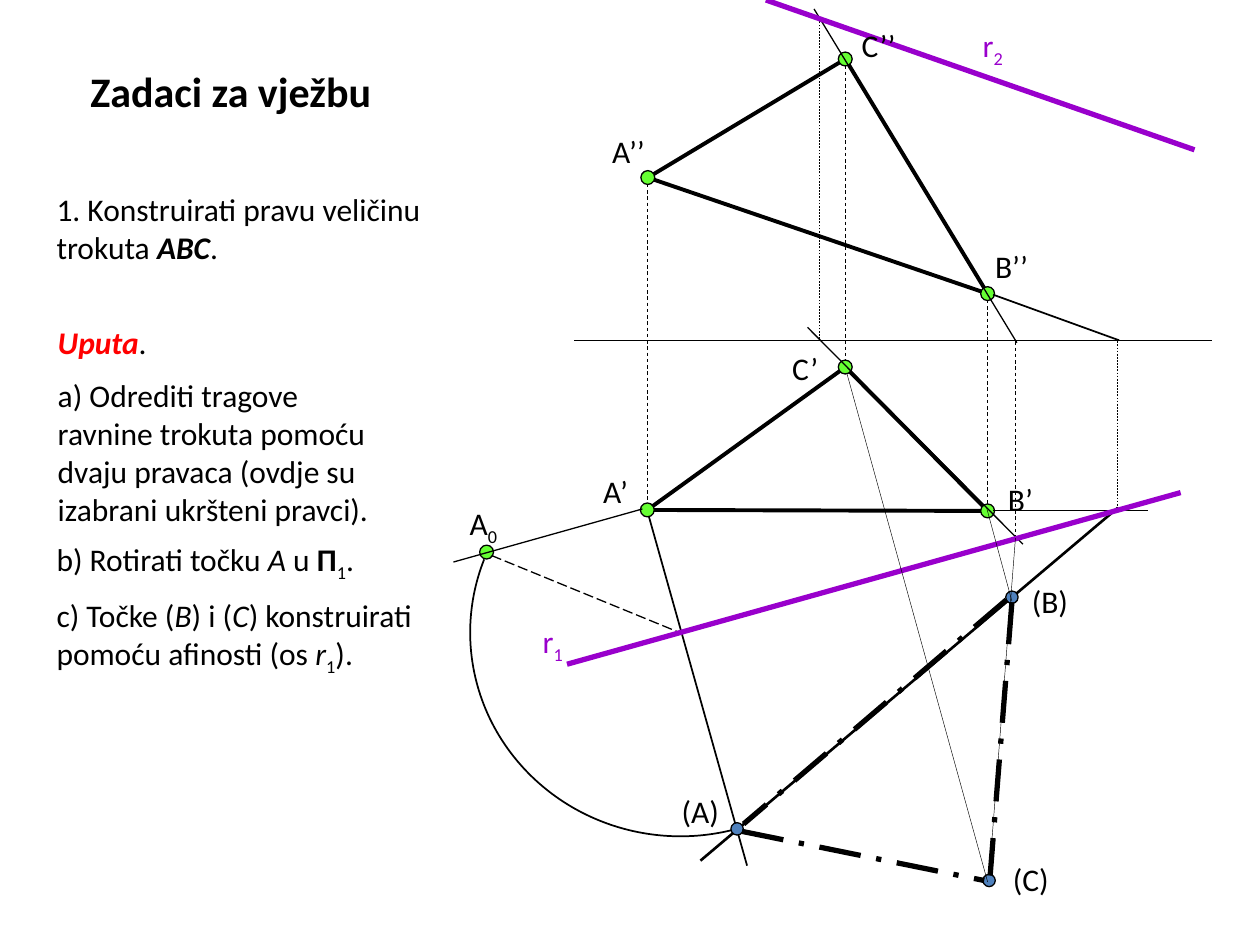
from lxml import etree
from pptx import Presentation
from pptx import util as u
from pptx.dml import color
from pptx.enum import dml, shapes, text
from pptx.oxml import ns

BLACK, PURPLE, RED = "000000", "9900CC", "FF0000"
GREEN, BLUE = "66FF33", "4F81BD"
DASH, LONG, DASH_DOT = (dml.MSO_LINE.DASH, dml.MSO_LINE.LONG_DASH,
                        dml.MSO_LINE.LONG_DASH_DOT)
BOLD, ITALIC, SUB = {"bold": True}, {"italic": True}, {"sub": True}
STRONG = {"bold": True, "italic": True}

# Points in cm: 2 = front view, 1 = top view, R = rotated into the plane
A2, B2, C2 = (13.06, 3.58), (19.91, 5.92), (17.04, 1.19)
A1, B1, C1 = (13.05, 10.28), (19.91, 10.3), (17.04, 7.4)
A0, AR, BR, CR = (9.81, 11.13), (14.86, 16.71), (20.4, 12.04), (19.94, 17.75)

LABELS = [
    (11.91, 9.4, 1.17, "A’"), (20.07, 9.55, 1.24, "B’"),
    (15.72, 6.91, 1.09, "C’"), (19.81, 4.85, 1.35, "B’’"),
    (12.09, 2.54, 1.45, "A’’"), (17.12, 0.41, 1.52, "C’’"),
    (13.49, 15.85, 1.45, "(A)"), (20.55, 11.61, 1.63, "(B)"),
    (20.17, 17.22, 1.35, "(C)"),
]
INDEXED_LABELS = [
    (9.22, 10.03, "A", "0", BLACK),
    (10.69, 12.42, "r", "1", PURPLE),
    (19.56, 0.41, "r", "2", PURPLE),
]
# Width in pt, dash, then lines as x1, y1, x2, y2
CONSTRUCTION = [
    (0.75, None, [(16.41, 0.18, 20.5, 6.91), (16.28, 6.6, 20.62, 10.97),
                  (9.14, 11.33, 12.95, 10.26)]),
    (0.25, DASH, [(16.51, 6.83, 16.51, 0.36), (22.53, 6.88, 22.53, 10.29)]),
    (0.5, DASH, [(20.47, 6.88, 20.47, 10.87)]),
    (1, None, [(20.02, 5.94, 22.56, 6.86), (20.02, 10.29, 23.14, 10.29),
               (15.06, 17.45, 13.08, 10.41)]),
    (0.75, LONG, [(9.91, 11.2, 13.77, 12.78)]),
    (1.5, None, [(22.53, 10.24, 14.12, 17.35)]),
]
ROTATION_RAYS = [(20.4, 12.12, 19.89, 10.24), (20.47, 10.85, 19.94, 17.65),
                 (19.91, 17.78, 17.07, 7.52)]
TRUE_SIZE_SIDES = [(14.96, 16.76, 19.84, 17.75), (20.29, 12.09, 14.99, 16.61),
                   (20.4, 12.14, 19.96, 17.65)]


def rgb(value):
    return color.RGBColor.from_string(value)


class Drawing:
    """Holds the text style and the slide being drawn; lengths are in cm."""
    font, size = "Calibri", 18

    def __init__(self, slide):
        self.s = slide

    def place(self, sp, x, y, w, h):
        values = {"left": x, "top": y, "width": w, "height": h}
        for name, value in values.items():
            setattr(sp, name, u.Cm(value))

    def fill_text(self, sp, paragraphs, size=None):
        """Fill sp with paragraphs, each a list of (text, format) runs."""
        tf = sp.text_frame
        frame = {"word_wrap": True, "auto_size": text.MSO_AUTO_SIZE.NONE,
                 "vertical_anchor": text.MSO_ANCHOR.TOP}
        for name, value in frame.items():
            setattr(tf, name, value)
        for i, runs in enumerate(paragraphs):
            p = tf.add_paragraph() if i else tf.paragraphs[0]
            p.alignment = text.PP_ALIGN.LEFT
            p.space_before = u.Pt(9 if i else 0)
            for content, style in runs:
                self.add_run(p, content, size, **style)

    def add_run(self, p, content, size, fill=BLACK, sub=False, bold=False,
                italic=False):
        r = p.add_run()
        r.text = content
        values = {"name": self.font, "size": u.Pt(size or self.size),
                  "bold": bold, "italic": italic}
        for name, value in values.items():
            setattr(r.font, name, value)
        r.font.color.rgb = rgb(fill)
        if sub:
            r._r.get_or_add_rPr().set("baseline", "-25000")

    def title(self, box, content):
        sp = self.s.shapes.title
        self.place(sp, *box)
        self.fill_text(sp, [[(content, BOLD)]], size=24)

    def body(self, box, paragraphs):
        sp = self.s.placeholders[1]
        self.place(sp, *box)
        self.fill_text(sp, paragraphs)
        for p in sp.text_frame.paragraphs:
            pPr = p._p.get_or_add_pPr()
            pPr.set("marL", "0")
            pPr.set("indent", "0")
            etree.SubElement(pPr, ns.qn("a:buNone"))

    def text(self, box, *runs):
        sp = self.s.shapes.add_textbox(*map(u.Cm, box))
        self.fill_text(sp, [runs])

    def line(self, x1, y1, x2, y2, width=0.75, dash=None, stroke=BLACK):
        sp = self.s.shapes.add_connector(
            shapes.MSO_CONNECTOR.STRAIGHT, *map(u.Cm, (x1, y1, x2, y2)))
        self.outline(sp, width, stroke)
        if dash:
            sp.line.dash_style = dash
        etree.SubElement(sp._element.spPr, ns.qn("a:effectLst"))

    def outline(self, sp, width, stroke=BLACK):
        sp.line.color.rgb = rgb(stroke)
        sp.line.width = u.Pt(width)

    def triangle(self, a, b, c):
        for start, end in ((c, a), (a, b), (c, b)):
            self.line(*start, *end, width=2.25)

    def dot(self, x, y, fill, d=0.28):
        sp = self.s.shapes.add_shape(
            shapes.MSO_SHAPE.OVAL, *map(u.Cm, (x - d / 2, y - d / 2, d, d)))
        sp.shadow.inherit = False
        sp.fill.solid()
        sp.fill.fore_color.rgb = rgb(fill)
        self.outline(sp, 0.75)

    def arc(self, x, y, rx, ry, start, end):
        """Arc about x, y; angles in degrees, clockwise from the right."""
        sp = self.s.shapes.add_shape(
            shapes.MSO_SHAPE.ARC,
            *map(u.Cm, (x - rx, y - ry, 2 * rx, 2 * ry)))
        sp.shadow.inherit = False
        sp.fill.background()
        self.outline(sp, 1)
        for i, angle in enumerate((start, end)):
            sp.adjustments[i] = angle * 0.6  # 60000 units per degree


def main():
    prs = Presentation()
    prs.slide_width, prs.slide_height = u.Cm(25.4), u.Cm(19.05)
    d = Drawing(prs.slides.add_slide(prs.slide_layouts[1]))

    d.title((1.57, 1.19, 7.7, 1.52), "Zadaci za vježbu")
    d.text((0.89, 3.71, 9.42, 1.78),
           ("1. Konstruirati pravu veličinu trokuta ", {}),
           ("ABC", STRONG), (".", {}))
    d.body((0.91, 6.38, 7.37, 4.5), [
        [("Uputa", {**STRONG, "fill": RED}), (".", {})],
        [("a) Odrediti tragove ravnine trokuta pomoću dvaju pravaca "
          "(ovdje su izabrani ukršteni pravci).", {})]])
    d.text((0.89, 10.77, 7.34, 0.94),
           ("b) Rotirati točku ", {}), ("A", ITALIC), (" u ", {}),
           ("Π", BOLD), ("1", SUB), (".", {}))
    d.text((0.89, 11.89, 7.77, 1.8),
           ("c) Točke (", {}), ("B", ITALIC), (") i (", {}), ("C", ITALIC),
           (") konstruirati pomoću afinosti (os ", {}), ("r", ITALIC),
           ("1", SUB), (").", {}))

    d.line(11.58, 6.86, 24.43, 6.86)
    d.triangle(A2, B2, C2)
    d.triangle(A1, B1, C1)
    for upper, lower in ((A2, A1), (C2, C1), (B2, B1)):
        d.line(lower[0], upper[1], *lower, width=0.5, dash=DASH)
    for point in (A2, B2, C2, A1, B1, C1, A0):
        d.dot(*point, GREEN)

    for width, dash, lines in CONSTRUCTION:
        for ends in lines:
            d.line(*ends, width=width, dash=dash)
    for trace in ((23.8, 9.93, 11.43, 13.39), (15.44, 0, 24.08, 3.02)):
        d.line(*trace, width=3, stroke=PURPLE)
    d.arc(13.72, 12.75, 4.24, 4.11, 74.3, 200.4)

    for point in (AR, BR, CR):
        d.dot(*point, BLUE, 0.25)
    for ray in ROTATION_RAYS:
        d.line(*ray, width=0.25)
    for side in TRUE_SIZE_SIDES:
        d.line(*side, width=3, dash=DASH_DOT)

    for x, y, w, name in LABELS:
        d.text((x, y, w, 0.94), (name, {}))
    for x, y, name, index, fill in INDEXED_LABELS:
        d.text((x, y, 1.3, 1), (name, {"fill": fill}),
               (index, {**SUB, "fill": fill}))

    prs.save("out.pptx")


if __name__ == "__main__":
    main()
